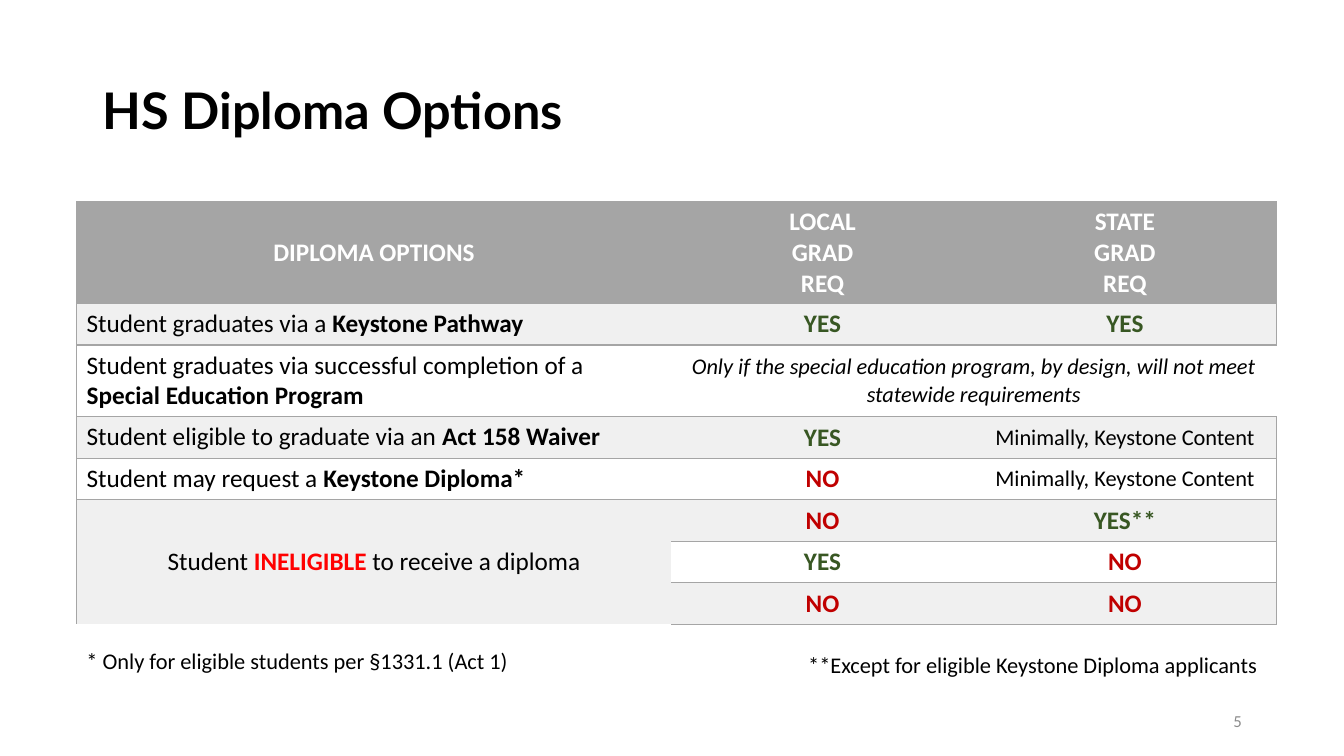
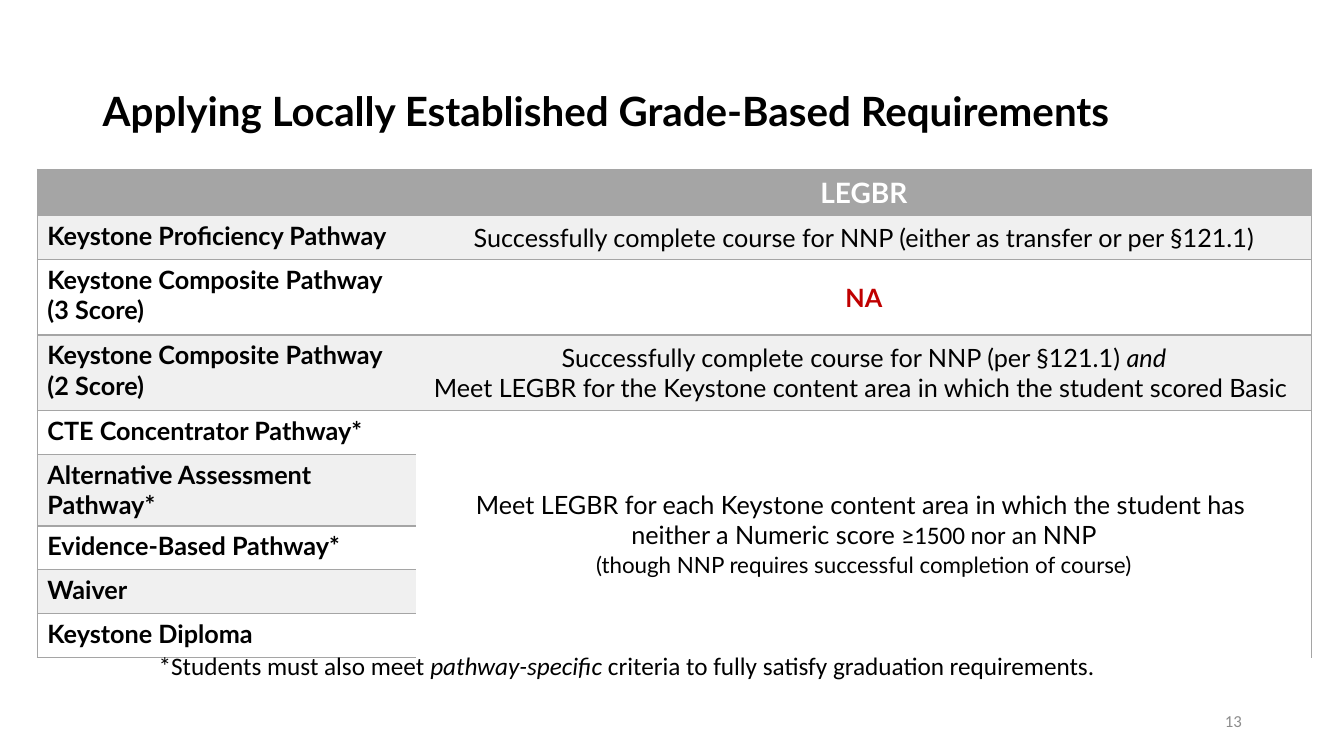
from dataclasses import dataclass
from itertools import product
from typing import NamedTuple, Optional, Union

from lxml.etree import SubElement
from pptx import Presentation
from pptx.dml.color import RGBColor
from pptx.enum.text import MSO_VERTICAL_ANCHOR as Anchor, PP_PARAGRAPH_ALIGNMENT as Align
from pptx.oxml.ns import qn
from pptx.slide import Slide
from pptx.text.text import TextFrame
from pptx.util import Inches, Pt

WIDTH, HEIGHT = Inches(13.33), Inches(7.5)
COLORS = {
    "black": "000000", "white": "FFFFFF", "header": "A5A5A5", "band": "F0F0F0",
    "yes": "385723", "no": "C00000", "alert": "FF0000", "number": "8C8C8C",
}
BORDER_POINTS = 1


class Box(NamedTuple):
    """Place and size in percent of the slide."""
    left: float
    top: float
    width: float
    height: float


class Run(NamedTuple):
    text: str
    bold: Optional[bool] = None
    italic: bool = False
    color: Optional[str] = None
    font: Optional[str] = None


Paragraph = Union[str, list[Union[str, Run]]]


@dataclass(frozen=True)
class Cell:
    paragraphs: list[Paragraph]
    color: str = "black"
    size: float = 18
    bold: bool = False
    italic: bool = False
    align: Align = Align.CENTER
    anchor: Anchor = Anchor.MIDDLE
    rows: int = 1
    columns: int = 1
    sizes: tuple[float, ...] = ()


@dataclass(frozen=True)
class Grid:
    left: float
    top: float
    columns: list[float]
    rows: list[float]
    font: str
    cells: list[list[Optional[Cell]]]


TITLE_BOX = Box(6.9, 5.33, 86.25, 19.33)
NUMBER_BOX = Box(70.65, 92.67, 22.5, 5.33)


def across(percent: float) -> int:
    return round(WIDTH * percent / 100)


def down(percent: float) -> int:
    return round(HEIGHT * percent / 100)


def rgb(name: str) -> RGBColor:
    return RGBColor.from_string(COLORS[name])


def write(frame: TextFrame, paragraphs: list[Paragraph], *, size: float, font: str = "Calibri",
          color: str = "black", bold: bool = False, italic: bool = False,
          align: Align = Align.LEFT, spacing: float = 1, sizes: tuple[float, ...] = ()) -> None:
    for index, content in enumerate(paragraphs):
        paragraph = frame.paragraphs[0] if index == 0 else frame.add_paragraph()
        paragraph.alignment = align
        paragraph.line_spacing = spacing
        for part in [content] if isinstance(content, str) else content:
            piece = Run(part) if isinstance(part, str) else part
            run = paragraph.add_run()
            run.text = piece.text
            run.font.size = Pt(sizes[index] if sizes else size)
            run.font.name = piece.font or font
            run.font.bold = bold if piece.bold is None else piece.bold
            run.font.italic = italic or piece.italic
            run.font.color.rgb = rgb(piece.color or color)


def add_text(slide: Slide, box: Box, content: Paragraph, *, anchor: Anchor = Anchor.TOP,
             **text_format) -> None:
    shape = slide.shapes.add_textbox(across(box.left), down(box.top),
                                     across(box.width), down(box.height))
    shape.text_frame.word_wrap = True
    shape.text_frame.vertical_anchor = anchor
    write(shape.text_frame, [content], **text_format)


def set_borders(table_cell, visible: dict[str, bool]) -> None:
    properties = table_cell._tc.get_or_add_tcPr()
    for side, shown in visible.items():
        line = SubElement(properties, qn(f"a:ln{side}"), w=str(Pt(BORDER_POINTS)))
        if shown:
            fill = SubElement(line, qn("a:solidFill"))
            SubElement(fill, qn("a:srgbClr"), val=COLORS["header"])
        else:
            SubElement(line, qn("a:noFill"))


def add_grid(slide: Slide, grid: Grid) -> None:
    row_count, column_count = len(grid.rows), len(grid.columns)
    table = slide.shapes.add_table(
        row_count, column_count, across(grid.left), down(grid.top),
        across(sum(grid.columns)), down(sum(grid.rows))).table
    table.first_row = table.horz_banding = False
    for column, width in zip(table.columns, grid.columns):
        column.width = across(width)
    for row, height in zip(table.rows, grid.rows):
        row.height = down(height)

    for row_index, column_index in product(range(row_count), range(column_count)):
        cell = grid.cells[row_index][column_index]
        if cell is None:
            continue
        fill = "header" if row_index == 0 else ("white", "band")[row_index % 2]
        last_row = row_index + cell.rows - 1
        last_column = column_index + cell.columns - 1
        for r, c in product(range(row_index, last_row + 1), range(column_index, last_column + 1)):
            covered = table.cell(r, c)
            set_borders(covered, {"L": c == 0, "R": c == column_count - 1,
                                  "T": r == row_index, "B": r == last_row})
            covered.fill.solid()
            covered.fill.fore_color.rgb = rgb(fill)
        table_cell = table.cell(row_index, column_index)
        if cell.rows * cell.columns > 1:
            table_cell.merge(table.cell(last_row, last_column))
        table_cell.vertical_anchor = cell.anchor
        write(table_cell.text_frame, cell.paragraphs, size=cell.size, font=grid.font,
              color=cell.color, bold=cell.bold, italic=cell.italic, align=cell.align,
              sizes=cell.sizes)


def header(*lines: str, size: float = 18) -> Cell:
    return Cell(list(lines), color="white", size=size, bold=True)


def label(*paragraphs: Paragraph, bold: bool = False) -> Cell:
    return Cell(list(paragraphs), bold=bold, align=Align.LEFT, anchor=Anchor.TOP)


def option(lead: str, emphasis: str) -> Cell:
    return label([lead, Run(emphasis, bold=True)])


def pathway(*lines: str) -> Cell:
    return label(*lines, bold=True)


def add_slide(presentation, title: str, title_size: float, number: int, grid: Grid) -> Slide:
    slide = presentation.slides.add_slide(presentation.slide_layouts[6])
    add_text(slide, TITLE_BOX, title, size=title_size, font="Lato", bold=True,
             spacing=0.9, anchor=Anchor.MIDDLE)
    add_grid(slide, grid)
    add_text(slide, NUMBER_BOX, str(number), size=12, color="number",
             align=Align.RIGHT, anchor=Anchor.MIDDLE)
    return slide


YES = Cell(["YES"], color="yes", bold=True)
YES_EXCEPT = Cell(["YES**"], color="yes", bold=True)
NO = Cell(["NO"], color="no", bold=True)
CONTENT = Cell(["Minimally, Keystone Content"], size=16)

DIPLOMA_GRID = Grid(
    left=5.7, top=26.67, columns=[44.25, 22.5, 22.5],
    rows=[13.47, 5.5, 9.47] + [5.5] * 5, font="Calibri",
    cells=[
        [header("DIPLOMA OPTIONS"), header("LOCAL", "GRAD", "REQ"),
         header("STATE", "GRAD", "REQ")],
        [option("Student graduates via a ", "Keystone Pathway"), YES, YES],
        [option("Student graduates via successful completion of a ",
                "Special Education Program"),
         Cell(["Only if the special education program, by design, will not meet "
               "statewide requirements"], size=16, italic=True, columns=2), None],
        [option("Student eligible to graduate via an ", "Act 158 Waiver"), YES, CONTENT],
        [option("Student may request a ", "Keystone Diploma*"), NO, CONTENT],
        [Cell([["Student ", Run("INELIGIBLE", bold=True, color="alert"),
                " to receive a diploma"]], rows=3), NO, YES_EXCEPT],
        [None, YES, NO],
        [None, NO, NO],
    ])

REQUIREMENT_GRID = Grid(
    left=2.78, top=22.4, columns=[28.2, 66.6],
    rows=[6.13, 5.8, 10, 10, 5.8, 9.47] + [5.8] * 3, font="Lato",
    cells=[
        [header(), header("LEGBR", size=20)],
        [pathway("Keystone Proficiency Pathway"),
         Cell(["Successfully complete course for NNP (either as transfer or per §121.1)"])],
        [pathway("Keystone Composite Pathway", "(3 Score)"),
         Cell(["NA"], color="no", bold=True)],
        [pathway("Keystone Composite Pathway", "(2 Score)"),
         Cell([["Successfully complete course for NNP (per §121.1) ", Run("and", italic=True)],
               "Meet LEGBR for the Keystone content area in which the student scored Basic "])],
        [pathway("CTE Concentrator Pathway*"),
         Cell(["Meet LEGBR for each Keystone content area in which the student has ",
               ["neither a Numeric score ", Run("≥1500 nor an ", font="Calibri"), "NNP"],
               "(though NNP requires successful completion of course)"],
              rows=5, sizes=(18, 18, 16))],
        [pathway("Alternative Assessment Pathway*"), None],
        [pathway("Evidence-Based Pathway*"), None],
        [pathway("Waiver"), None],
        [pathway("Keystone Diploma"), None],
    ])


def main() -> None:
    presentation = Presentation()
    presentation.slide_width, presentation.slide_height = WIDTH, HEIGHT

    slide = add_slide(presentation, "HS Diploma Options", 36, 5, DIPLOMA_GRID)
    add_text(slide, Box(5.7, 84.93, 34.35, 4.93),
             "* Only for eligible students per §1331.1 (Act 1)", size=16)
    add_text(slide, Box(54, 85.47, 40.28, 8.93),
             "**Except for eligible Keystone Diploma applicants", size=16, align=Align.RIGHT)

    slide = add_slide(presentation, "Applying Locally Established Grade-Based Requirements",
                      28.8, 13, REQUIREMENT_GRID)
    add_text(slide, Box(2.78, 85.33, 87.7, 5.33),
             ["*Students must also meet ", Run("pathway-specific", italic=True),
              " criteria to fully satisfy graduation requirements."],
             size=18, align=Align.CENTER)

    presentation.save("out.pptx")


if __name__ == "__main__":
    main()
